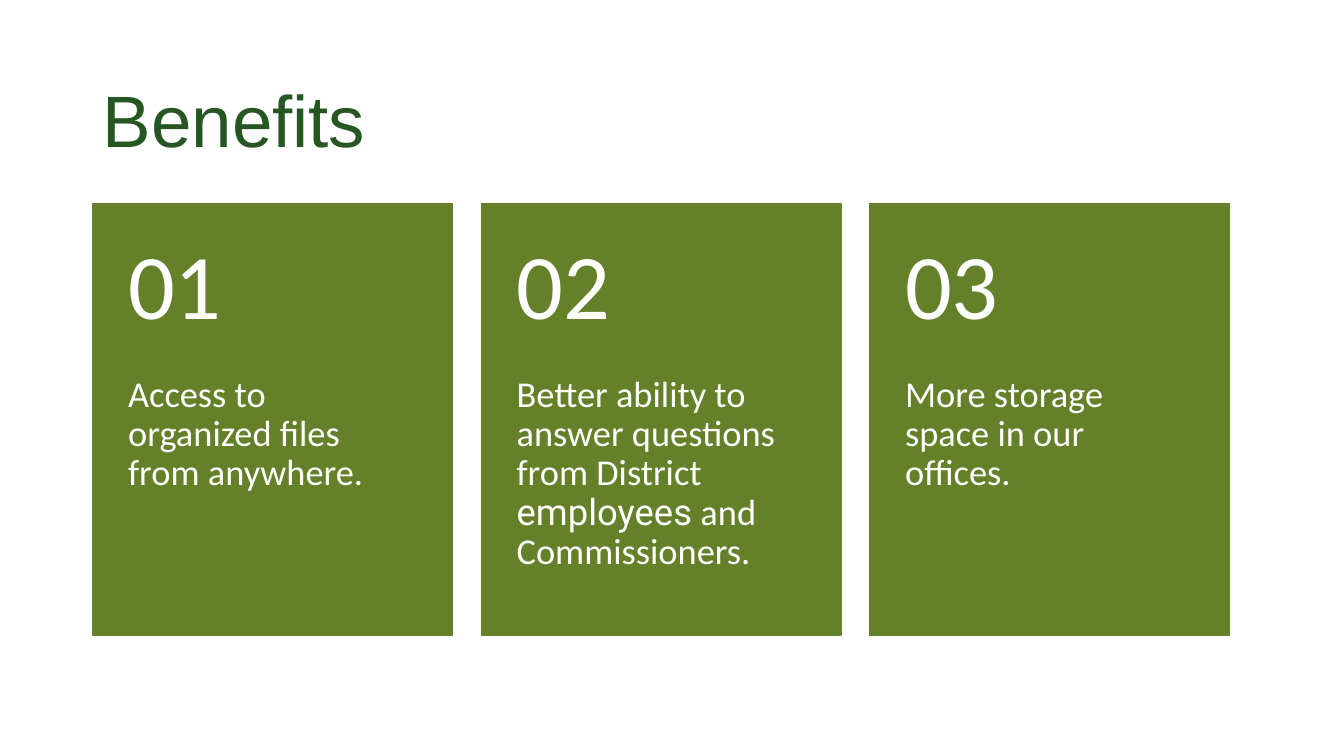
from pptx import Presentation
from pptx.dml.color import RGBColor
from pptx.enum.shapes import MSO_SHAPE as Shape
from pptx.enum.text import MSO_ANCHOR as Anchor
from pptx.util import Cm, Pt

WHITE = RGBColor(0xFF, 0xFF, 0xFF)
OLIVE = RGBColor(0x64, 0x80, 0x28)
FOREST = RGBColor(0x26, 0x56, 0x21)

LEFT, TOP = 2.34, 5.13
WIDTH, HEIGHT = 9.07, 10.87
PITCH = 9.79
HEAD = 4.34

BENEFITS = [
    [("Access to organized files from anywhere.", "Calibri")],
    [
        ("Better ability to answer questions from District ", "Calibri"),
        ("employees", "Roboto"),
        (" and Commissioners.", "Calibri"),
    ],
    [("More storage space in our offices.", "Calibri")],
]


def add_text(slide, box, parts, size, color, anchor, inset):
    frame = slide.shapes.add_textbox(*map(Cm, box)).text_frame
    frame.word_wrap = True
    frame.vertical_anchor = anchor
    left, top, right, bottom = map(Cm, inset)
    frame.margin_left, frame.margin_right = left, right
    frame.margin_top, frame.margin_bottom = top, bottom
    para = frame.paragraphs[0]
    para.line_spacing = 0.9
    for text, font in parts:
        run = para.add_run()
        run.text = text
        run.font.name = font
        run.font.size = Pt(size)
        run.font.color.rgb = color


def add_card(slide, index, parts):
    left = LEFT + index * PITCH
    card = slide.shapes.add_shape(
        Shape.RECTANGLE, Cm(left), Cm(TOP), Cm(WIDTH), Cm(HEIGHT))
    card.shadow.inherit = False
    card.fill.solid()
    card.fill.fore_color.rgb = OLIVE
    card.line.color.rgb = OLIVE
    card.line.width = Pt(1)
    add_text(slide, (left, TOP + HEAD, WIDTH, HEIGHT - HEAD), parts,
             26, WHITE, Anchor.TOP, (0.89, 0, 0.89, 0.91))
    add_text(slide, (left, TOP, WIDTH, HEAD), [(f"{index + 1:02}", "Calibri")],
             66, WHITE, Anchor.MIDDLE, (0.89, 0.46, 0.89, 0.46))


def main():
    deck = Presentation()
    deck.slide_width, deck.slide_height = Cm(33.87), Cm(19.05)
    slide = deck.slides.add_slide(deck.slide_layouts[6])
    add_text(slide, (LEFT, 1.55, 29.21, 3.15), [("Benefits", "Arial")],
             52, FOREST, Anchor.MIDDLE, (0.25, 0.13, 0.25, 0.13))
    for index, parts in enumerate(BENEFITS):
        add_card(slide, index, parts)
    deck.save("out.pptx")


if __name__ == "__main__":
    main()
